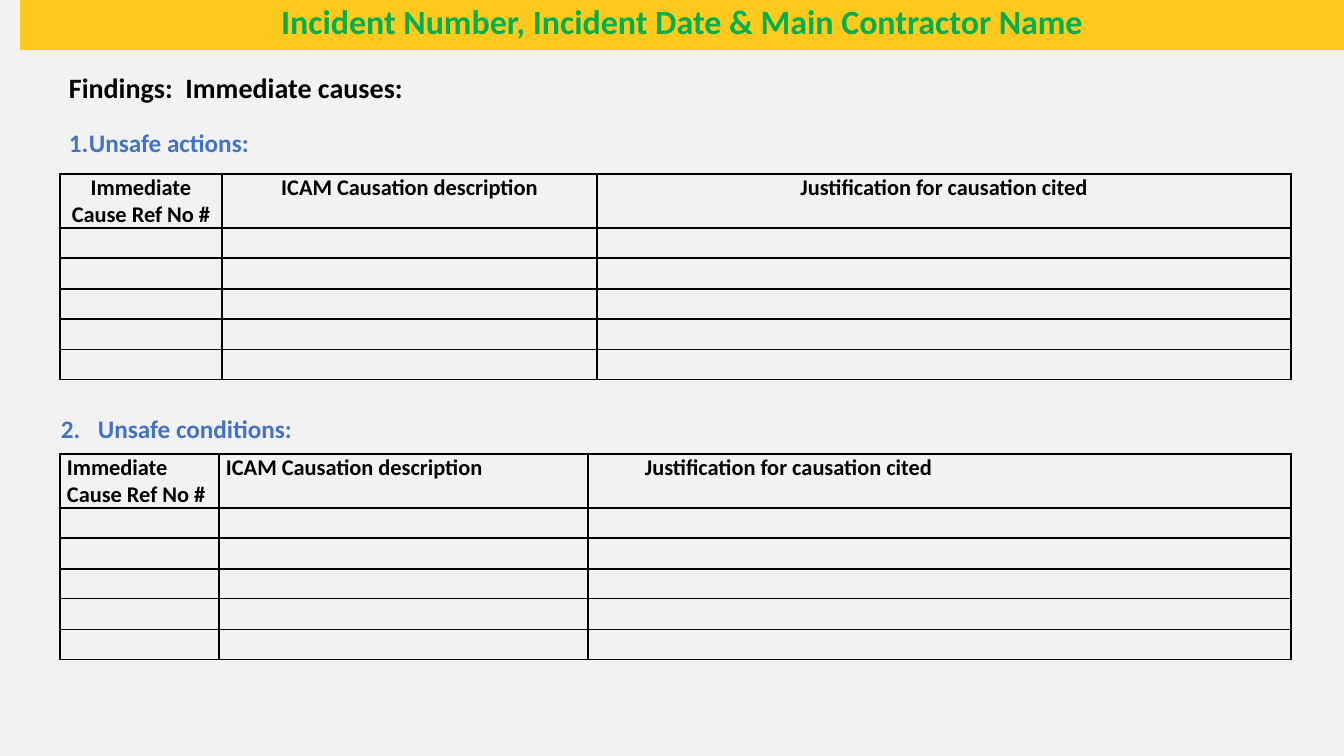
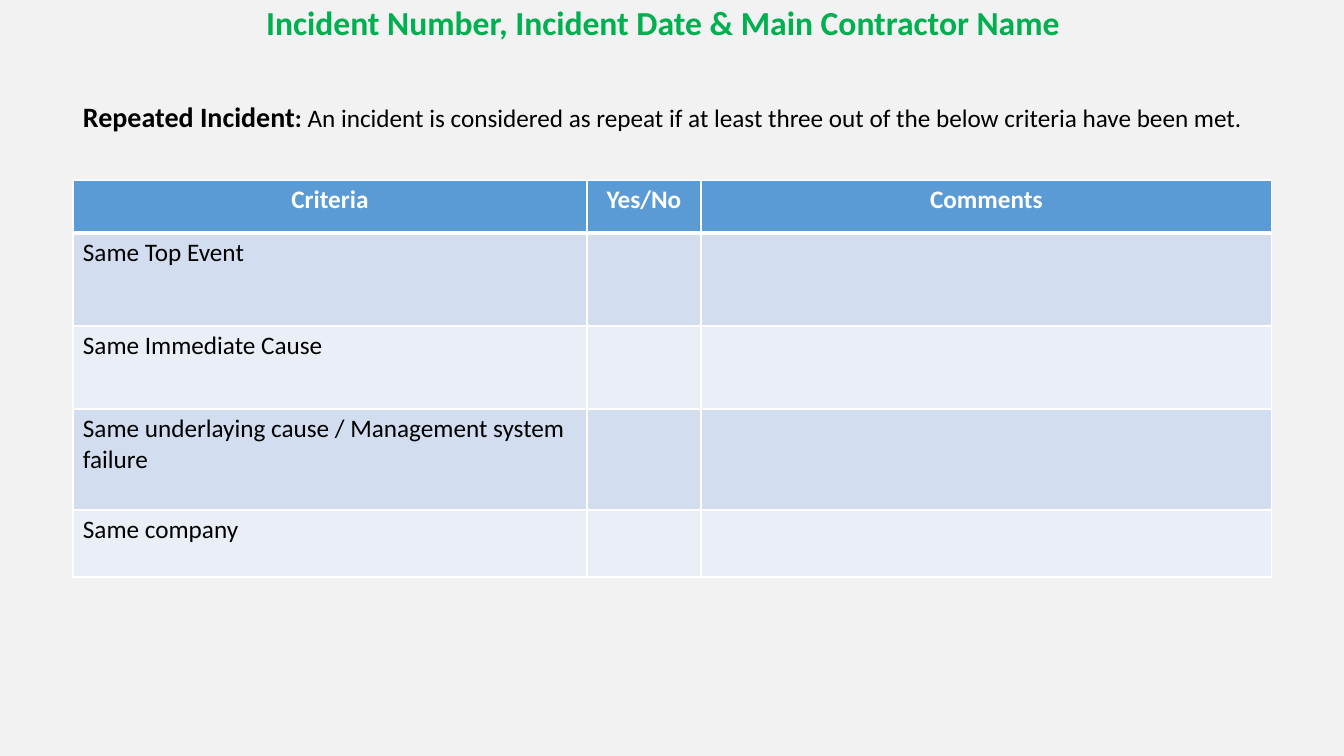
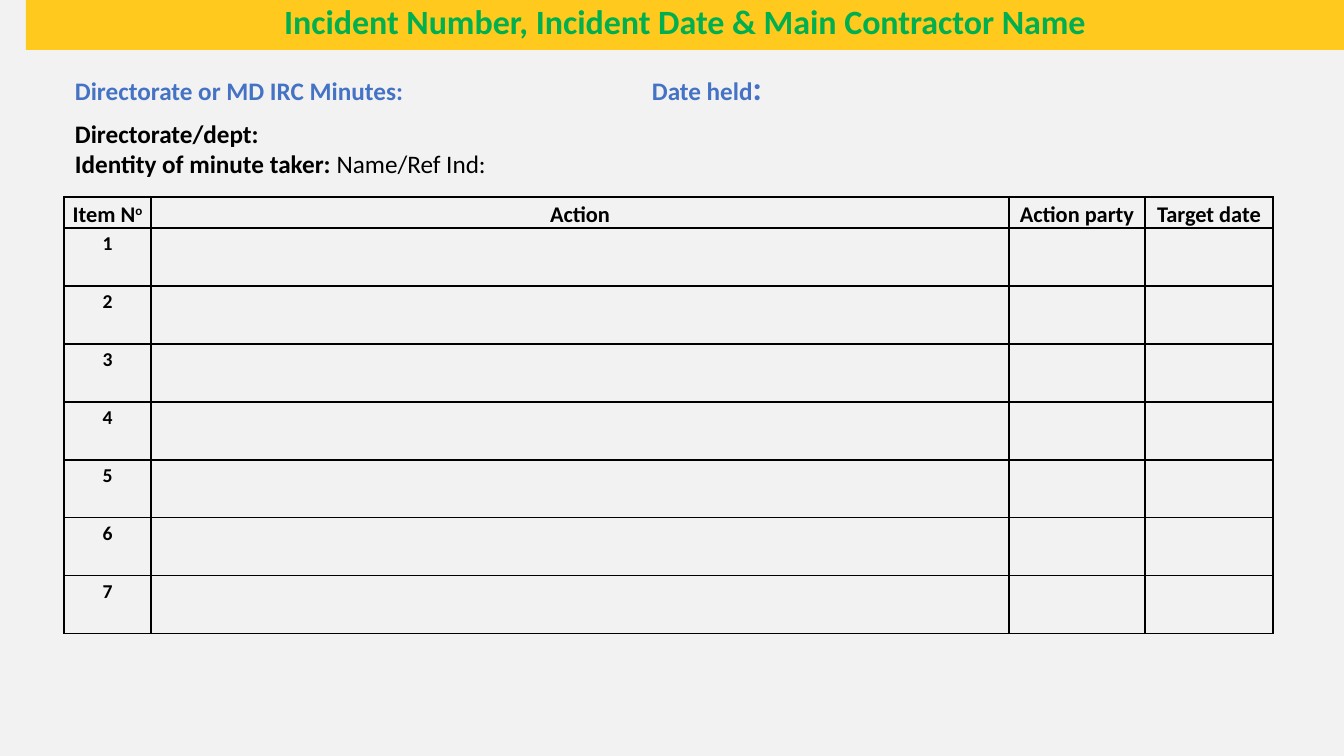
"""Build three incident review slides: immediate causes, repeat criteria and minutes."""
from dataclasses import dataclass
from typing import NamedTuple, Optional

from lxml.etree import SubElement
from pptx import Presentation
from pptx.dml.color import RGBColor
from pptx.enum.text import MSO_ANCHOR, MSO_AUTO_SIZE, PP_ALIGN
from pptx.oxml.ns import qn
from pptx.util import Emu, Pt

EMU_PER_PX = 914400 / 100.8


@dataclass(frozen=True)
class Theme:
    font: str = "Calibri"
    paper: str = "F2F2F2"
    band: str = "FFC91D"
    title: str = "00B050"
    accent: str = "4472C4"
    ink: str = "000000"
    white: str = "FFFFFF"
    header: str = "5B9BD5"
    stripes: tuple[str, str] = ("D2DEEF", "EAEFF7")
    band_title_size: float = 24.3
    title_size: float = 24
    lead_size: float = 20
    body_size: float = 18
    table_size: float = 16
    item_size: float = 14


THEME = Theme()


class Box(NamedTuple):
    left: int
    top: int
    width: int
    height: int


class Span(NamedTuple):
    text: str
    size: float = THEME.body_size
    color: str = THEME.ink
    bold: bool = True
    superscript: bool = False


class Heading(NamedTuple):
    spans: tuple[Span, ...]
    align: PP_ALIGN = PP_ALIGN.CENTER
    indent: int = 0


@dataclass(frozen=True)
class Grid:
    left: int
    top: int
    columns: tuple[int, ...]
    rows: tuple[int, ...]
    headings: tuple[Heading, ...]
    labels: tuple[Span, ...] = ()
    label_align: PP_ALIGN = PP_ALIGN.LEFT
    border: str = THEME.ink
    header_rule: float = 1
    header_fill: Optional[str] = None
    stripes: tuple[str, ...] = ()
    inset: tuple[int, int] = (7, 0)
    line_spacing: float = 1.0


def px(length: int) -> Emu:
    return Emu(round(length * EMU_PER_PX))


def rgb(color: str) -> RGBColor:
    return RGBColor.from_string(color)


def write(para, spans: tuple[Span, ...]) -> None:
    for span in spans:
        run = para.add_run()
        run.text = span.text
        run.font.name = THEME.font
        run.font.size = Pt(span.size)
        run.font.bold = span.bold
        run.font.color.rgb = rgb(span.color)
        if span.superscript:
            run.font._element.set("baseline", "30000")


def place(shape, box: Box) -> None:
    shape.left, shape.top, shape.width, shape.height = map(px, box)


def add_title(page, box: Box, size: float, band: Optional[str] = None) -> None:
    title = page.shapes.title
    place(title, box)
    if band:
        title.fill.solid()
        title.fill.fore_color.rgb = rgb(band)
    frame = title.text_frame
    frame.auto_size = MSO_AUTO_SIZE.NONE
    frame.word_wrap = True
    frame.vertical_anchor = MSO_ANCHOR.TOP
    frame.margin_top = frame.margin_bottom = 0
    para = frame.paragraphs[0]
    para.alignment = PP_ALIGN.CENTER
    para.line_spacing = 1.0
    write(para, (Span("Incident Number, Incident Date & Main Contractor Name", size, THEME.title),))


def add_text(page, box: Box, *lines: tuple[Span, ...]):
    frame = page.shapes.add_textbox(*map(px, box)).text_frame
    frame.word_wrap = True
    for index, spans in enumerate(lines):
        para = frame.add_paragraph() if index else frame.paragraphs[0]
        write(para, spans)
    return frame.paragraphs[0]


def add_numbered(page, box: Box, number: int, text: str, hang: int) -> None:
    para = add_text(page, box, (Span(text, color=THEME.accent),))
    properties = para._p.get_or_add_pPr()
    properties.set("marL", str(px(hang)))
    properties.set("indent", str(-px(hang)))
    SubElement(properties, qn("a:buFont"), typeface=THEME.font)
    SubElement(properties, qn("a:buAutoNum"), type="arabicPeriod", startAt=str(number))


def add_tab(para, position: int) -> None:
    tabs = SubElement(para._p.get_or_add_pPr(), qn("a:tabLst"))
    SubElement(tabs, qn("a:tab"), pos=str(px(position)), algn="l")


def set_borders(cell, color: str, top: float, bottom: float) -> None:
    properties = cell._tc.get_or_add_tcPr()
    for side, width in (("L", 1), ("R", 1), ("T", top), ("B", bottom)):
        line = SubElement(properties, qn(f"a:ln{side}"), w=str(Pt(width)))
        fill = SubElement(line, qn("a:solidFill"))
        SubElement(fill, qn("a:srgbClr"), val=color)


def set_fill(cell, color: Optional[str]) -> None:
    if color:
        cell.fill.solid()
        cell.fill.fore_color.rgb = rgb(color)
    else:
        cell.fill.background()


def cell_content(grid: Grid, row: int, column: int) -> Heading:
    if row == 0:
        return grid.headings[column]
    if column == 0 and grid.labels:
        return Heading((grid.labels[row - 1],), grid.label_align)
    return Heading(())


def add_grid(page, grid: Grid) -> None:
    frame = page.shapes.add_table(
        len(grid.rows), len(grid.columns),
        *map(px, (grid.left, grid.top, sum(grid.columns), sum(grid.rows))))
    table = frame.table
    table.horz_banding = False
    for column, width in zip(table.columns, grid.columns):
        column.width = px(width)
    for row, height in zip(table.rows, grid.rows):
        row.height = px(height)
    for row in range(len(grid.rows)):
        stripe = grid.stripes[(row - 1) % len(grid.stripes)] if grid.stripes else None
        for column in range(len(grid.columns)):
            cell = table.cell(row, column)
            content = cell_content(grid, row, column)
            set_borders(cell, grid.border,
                        grid.header_rule if row == 1 else 1,
                        grid.header_rule if row == 0 else 1)
            set_fill(cell, stripe if row else grid.header_fill)
            side, edge = map(px, grid.inset)
            cell.margin_left = side + px(content.indent)
            cell.margin_right = side
            cell.margin_top = cell.margin_bottom = edge
            para = cell.text_frame.paragraphs[0]
            para.alignment = content.align
            para.line_spacing = grid.line_spacing
            write(para, content.spans)
            if not content.spans:
                SubElement(para._p, qn("a:endParaRPr"), sz=str(THEME.item_size * 100))


def headings(*texts: str, size: float = THEME.table_size, color: str = THEME.ink,
             align: PP_ALIGN = PP_ALIGN.CENTER) -> tuple[Heading, ...]:
    return tuple(Heading((Span(text, size, color),), align) for text in texts)


def build_causes(page) -> None:
    add_title(page, Box(20, 0, 1324, 50), THEME.band_title_size, THEME.band)
    add_text(page, Box(59, 66, 420, 44), (Span("Findings:  Immediate causes:", THEME.lead_size),))
    add_numbered(page, Box(59, 122, 260, 40), 1, "Unsafe actions:", 20)
    add_numbered(page, Box(51, 408, 300, 40), 2, "Unsafe conditions:", 37)
    texts = ("Immediate Cause Ref No #", "ICAM Causation description",
             "Justification for causation cited")
    rows = (54, 30, 31, 30, 31, 30)
    add_grid(page, Grid(60, 174, (162, 375, 694), rows, headings(*texts)))
    left_headings = headings(*texts, align=PP_ALIGN.LEFT)
    indented = left_headings[:2] + (left_headings[2]._replace(indent=50),)
    add_grid(page, Grid(60, 454, (159, 369, 703), rows, indented))


def build_criteria(page) -> None:
    add_title(page, Box(169, 2, 988, 46), THEME.title_size)
    add_text(page, Box(73, 95, 1199, 64), (
        Span("Repeated Incident", THEME.lead_size),
        Span(": "),
        Span("An incident is considered as repeat if at least three out of the below "
             "criteria have been met.", bold=False)))
    criteria = ("Same Top Event", "Same Immediate Cause",
                "Same underlaying cause / Management system failure", "Same company")
    add_grid(page, Grid(
        73, 180, (514, 114, 571), (53, 93, 83, 101, 67),
        headings("Criteria", "Yes/No", "Comments", size=THEME.body_size, color=THEME.white),
        labels=tuple(Span(text, bold=False) for text in criteria),
        border=THEME.white, header_rule=3, header_fill=THEME.header,
        stripes=THEME.stripes, inset=(10, 5)))


def build_minutes(page) -> None:
    add_title(page, Box(26, 0, 1318, 50), THEME.band_title_size, THEME.band)
    minutes = add_text(page, Box(65, 66, 1109, 46), (
        Span("Directorate or MD IRC Minutes:\tDate held", color=THEME.accent),
        Span(":", THEME.title_size, THEME.accent)))
    minutes.line_spacing = 0.9
    add_tab(minutes, 577)
    add_text(page, Box(65, 113, 1109, 72),
             (Span("Directorate/dept:"),),
             (Span("Identity of minute taker: "), Span("Name/Ref Ind:", bold=False)))
    item = Heading((Span("Item N", THEME.table_size),
                    Span("o", THEME.table_size, superscript=True)))
    add_grid(page, Grid(
        64, 197, (87, 858, 136, 128), (31,) + (58,) * 7,
        (item,) + headings("Action", "Action party", "Target date"),
        labels=tuple(Span(str(number), THEME.item_size) for number in range(1, 8)),
        label_align=PP_ALIGN.CENTER, header_fill=THEME.paper,
        inset=(6, 0), line_spacing=1.15))


def main() -> None:
    deck = Presentation()
    deck.slide_width, deck.slide_height = px(1344), px(756)
    background = deck.slide_master.background.fill
    background.solid()
    background.fore_color.rgb = rgb(THEME.paper)
    title_only = deck.slide_layouts.get_by_name("Title Only")
    for build in (build_causes, build_criteria, build_minutes):
        build(deck.slides.add_slide(title_only))
    deck.save("out.pptx")


if __name__ == "__main__":
    main()
